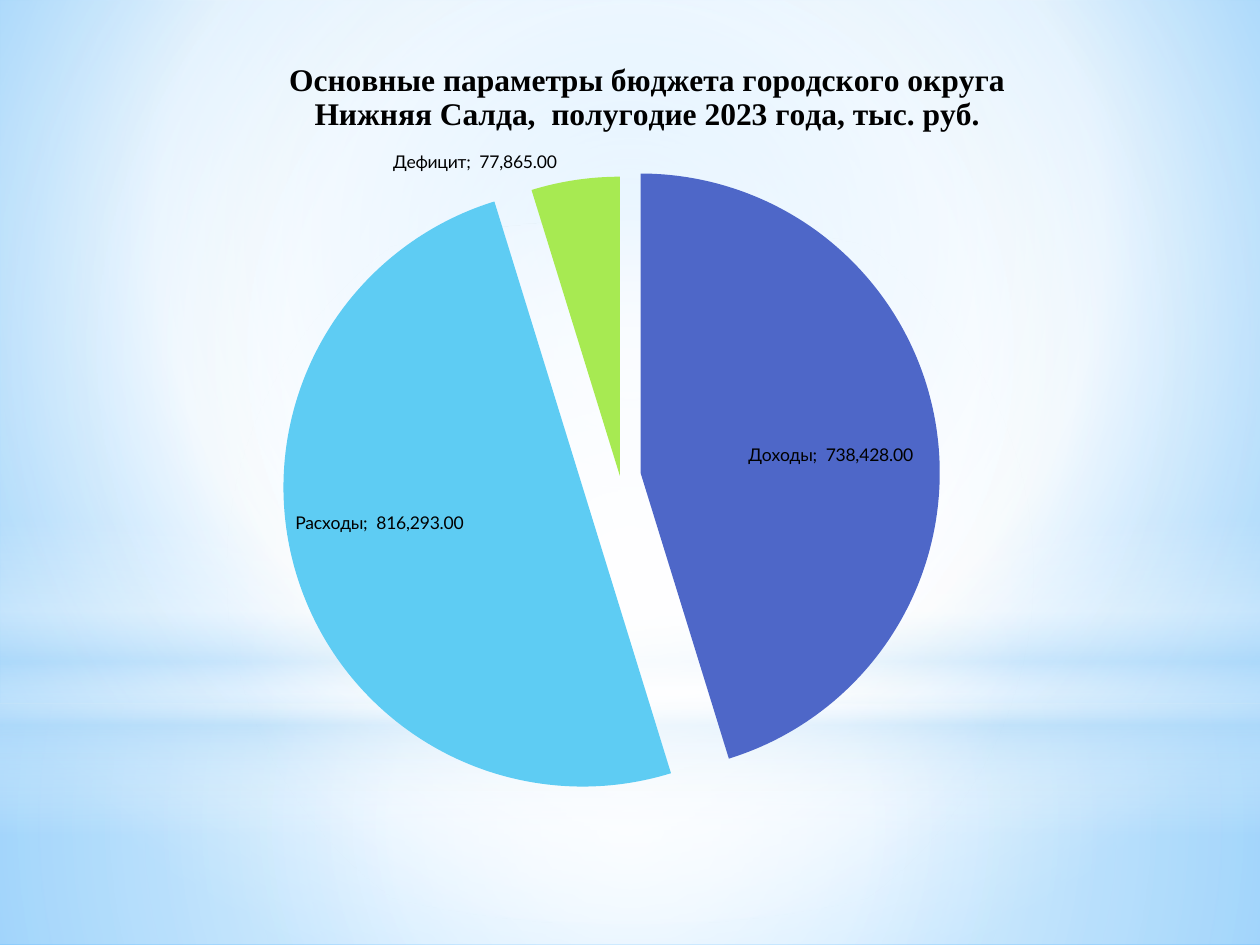
from pptx import Presentation
from pptx.chart.data import CategoryChartData
from pptx.dml.color import RGBColor
from pptx.enum.chart import XL_CHART_TYPE, XL_LABEL_POSITION
from pptx.enum.shapes import MSO_SHAPE
from pptx.oxml import parse_xml
from pptx.oxml.ns import nsdecls
from pptx.util import Pt

WHITE = RGBColor(0xFF, 0xFF, 0xFF)
BLACK = RGBColor(0, 0, 0)
PALE = RGBColor(0xB4, 0xDC, 0xFA)
SKY = RGBColor(0x9E, 0xD5, 0xFF)
DEEP = RGBColor(0x5B, 0xB9, 0xFF)
INDIGO = RGBColor(0x4E, 0x67, 0xC8)
CYAN = RGBColor(0x5E, 0xCC, 0xF3)
LIME = RGBColor(0xA7, 0xEA, 0x52)

TITLE = ("Основные параметры бюджета городского округа "
         "Нижняя Салда,  полугодие 2023 года, тыс. руб.")
# Name, value, colour, pull from the centre in percent
BUDGET = [("Доходы", 738428, INDIGO, 7),
          ("Расходы", 816293, CYAN, 13),
          ("Дефицит", 77865, LIME, 0)]
FORMAT = r"_-* #,##0.00_р_._-;\-* #,##0.00_р_._-"
MIDDLE = (50, 50, 50, 50)
WIDE, HIGH = 538, 466.5  # chart size in points


def make_grad(stops, focus=None):
    """Gradient of (place, colour, opacity) stops, round if it has a focus."""
    marks = "".join(
        f'<a:gs pos="{place * 1000}"><a:srgbClr val="{color}">'
        f'<a:alpha val="{alpha * 1000}"/></a:srgbClr></a:gs>'
        for place, color, alpha in stops)
    if focus:
        sides = " ".join(f'{side}="{part * 1000}"'
                         for side, part in zip("ltrb", focus))
        course = f'<a:path path="circle"><a:fillToRect {sides}/></a:path>'
    else:
        course = '<a:lin ang="5400000" scaled="0"/>'
    return parse_xml(f'<a:gradFill {nsdecls("a")} rotWithShape="1">'
                     f'<a:gsLst>{marks}</a:gsLst>{course}</a:gradFill>')


def paint_back(slide):
    slide.background.fill.solid()
    props = slide._element.xpath(".//p:bgPr")[0]
    stops = [(0, SKY, 100), (60, WHITE, 100), (100, DEEP, 100)]
    props.replace(props[0], make_grad(stops, (20, 10, 20, 60)))


def add_glow(slide, kind, top, height, stops, focus=None):
    shape = slide.shapes.add_shape(kind, 0, Pt(top), Pt(720), Pt(height))
    shape.shadow.inherit = False
    shape.line.fill.background()
    shape._element.spPr.insert(2, make_grad(stops, focus))


def make_layout(target="", **sizes):
    """Manual layout from points within the chart."""
    inner = f'<c:layoutTarget val="{target}"/>' if target else ""
    modes = "".join(f'<c:{key}Mode val="edge"/>' for key in "xy")
    parts = "".join(
        f'<c:{key} val="{size / (WIDE if key in "xw" else HIGH)}"/>'
        for key, size in sizes.items())
    return parse_xml(f'<c:layout {nsdecls("c")}><c:manualLayout>'
                     f'{inner}{modes}{parts}</c:manualLayout></c:layout>')


def set_layout(node, index, layout):
    for old in node.xpath("./c:layout"):
        node.remove(old)
    node.insert(index, layout)


def add_title(chart):
    chart.has_title = True
    title = chart.chart_title
    title.include_in_layout = False
    para = title.text_frame.paragraphs[0]
    para.text = TITLE
    font = para.font
    font.name, font.size, font.bold = "Times New Roman", Pt(18), True
    font.color.rgb = BLACK
    set_layout(title._element, 1, make_layout(x=72, y=14.7))


def add_labels(plot):
    plot.has_data_labels = True
    labels = plot.data_labels
    labels.show_value = labels.show_category_name = True
    labels.show_percentage = False
    labels.number_format = FORMAT
    labels.number_format_is_linked = False
    labels.position = XL_LABEL_POSITION.BEST_FIT
    labels.font.name, labels.font.size = "Lato", Pt(10)
    labels.font.color.rgb = BLACK
    mark = parse_xml(f'<c:separator {nsdecls("c")}>; </c:separator>')
    flags = labels._element.xpath("./c:showBubbleSize|./c:showPercent")
    flags[-1].addnext(mark)


def add_pie(slide):
    data = CategoryChartData(number_format=FORMAT)
    data.categories = [row[0] for row in BUDGET]
    data.add_series("Series 1", [row[1] for row in BUDGET])
    chart = slide.shapes.add_chart(
        XL_CHART_TYPE.PIE, Pt(90), Pt(16.5), Pt(WIDE), Pt(HIGH), data).chart
    chart.has_legend = False
    chart.font.name, chart.font.size = "Lato", Pt(18)
    chart.font.color.rgb = BLACK
    add_title(chart)

    # Slices, pulled apart
    plot = chart.plots[0]
    plot.vary_by_categories = True
    series = plot.series[0]
    for index, (_, _, color, pull) in enumerate(BUDGET):
        look = series.points[index].format
        look.fill.solid()
        look.fill.fore_color.rgb = color
        look.line.fill.background()
        gap = parse_xml(f'<c:explosion {nsdecls("c")} val="{pull}"/>')
        series._element.xpath("./c:dPt/c:spPr")[index].addprevious(gap)
    add_labels(plot)

    area = chart._chartSpace.xpath(".//c:plotArea")[0]
    set_layout(area, 0, make_layout("inner", x=40, y=84.5, w=448.5, h=342))


def main():
    deck = Presentation()
    deck.slide_width, deck.slide_height = Pt(720), Pt(540)
    slide = deck.slides.add_slide(deck.slide_layouts[6])

    # Backdrop: floor, wall, horizon band and central glow
    paint_back(slide)
    rect = MSO_SHAPE.RECTANGLE
    add_glow(slide, rect, 402, 138,
             [(0, WHITE, 91), (37, WHITE, 76), (100, PALE, 79)], MIDDLE)
    add_glow(slide, rect, 0, 402,
             [(0, WHITE, 89), (48, WHITE, 62), (100, PALE, 79)], MIDDLE)
    add_glow(slide, rect, 297, 180,
             [(0, WHITE, 0), (29, WHITE, 30), (45, PALE, 40),
              (55, WHITE, 26), (65, PALE, 60), (100, WHITE, 0)])
    add_glow(slide, MSO_SHAPE.OVAL, 126, 402,
             [(0, WHITE, 100), (56, WHITE, 0)], MIDDLE)

    # Budget chart
    add_pie(slide)
    deck.save("out.pptx")


if __name__ == "__main__":
    main()
